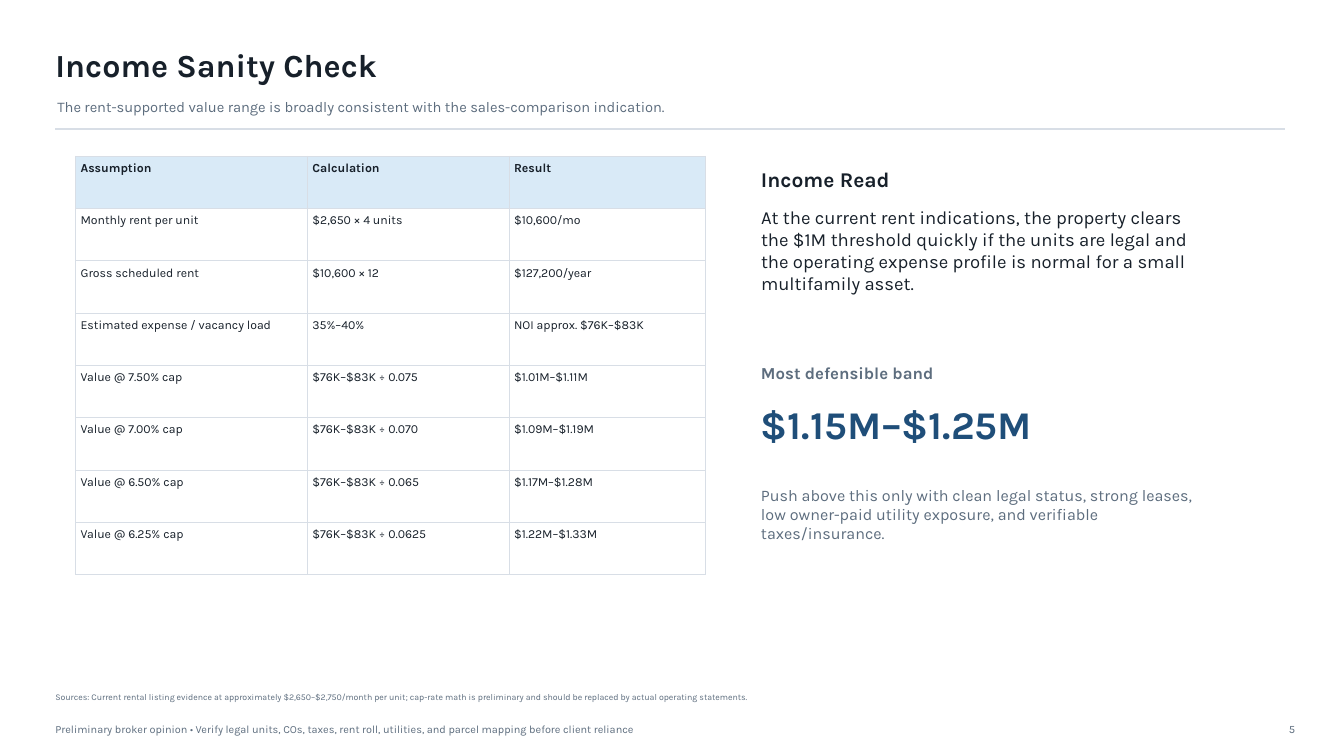
from lxml.etree import SubElement
from pptx import Presentation
from pptx.dml.color import RGBColor
from pptx.enum.shapes import MSO_CONNECTOR as CONN
from pptx.enum.text import MSO_ANCHOR as ANCHOR, PP_ALIGN as ALIGN
from pptx.oxml.ns import qn
from pptx.util import Pt

FONT = "Karla"
INK, MUTED, NAVY = "17202A", "5D6D7E", "1F4E79"
RULE, HEAD_FILL, WHITE = "D8DEE6", "D9EAF7", "FFFFFF"
COLUMN_WIDTHS = (165.6, 144, 140.4)
ROWS = (
    ("Assumption", "Calculation", "Result"),
    ("Monthly rent per unit", "$2,650 × 4 units", "$10,600/mo"),
    ("Gross scheduled rent", "$10,600 × 12", "$127,200/year"),
    ("Estimated expense / vacancy load", "35%–40%", "NOI approx. $76K–$83K"),
    ("Value @ 7.50% cap", "$76K–$83K ÷ 0.075", "$1.01M–$1.11M"),
    ("Value @ 7.00% cap", "$76K–$83K ÷ 0.070", "$1.09M–$1.19M"),
    ("Value @ 6.50% cap", "$76K–$83K ÷ 0.065", "$1.17M–$1.28M"),
    ("Value @ 6.25% cap", "$76K–$83K ÷ 0.0625", "$1.22M–$1.33M"),
)


def rgb(value):
    """Return the colour for a hex string."""
    return RGBColor.from_string(value)


def style(p, size, color, bold=False):
    """Format every run of a paragraph."""
    for r in p.runs:
        r.font.name, r.font.size, r.font.bold = FONT, Pt(size), bold
        r.font.color.rgb = rgb(color)


def set_margins(target, margin):
    """Give a text frame or a table cell four equal margins."""
    target.margin_left = target.margin_right = Pt(margin)
    target.margin_top = target.margin_bottom = Pt(margin)


def add_text(slide, x, y, w, h, text, size, color, bold=False, align=ALIGN.LEFT):
    """Add a wrapped, vertically centred text box without margins."""
    tf = slide.shapes.add_textbox(Pt(x), Pt(y), Pt(w), Pt(h)).text_frame
    tf.word_wrap = True
    tf.vertical_anchor = ANCHOR.MIDDLE
    set_margins(tf, 0)
    p = tf.paragraphs[0]
    p.text = text
    p.alignment = align
    style(p, size, color, bold)


def add_borders(cell, color, width):
    """Draw a thin line on all four sides of a cell."""
    tcPr = cell._tc.get_or_add_tcPr()
    for side in ("lnL", "lnR", "lnT", "lnB"):
        ln = SubElement(tcPr, qn(f"a:{side}"), w=str(Pt(width)))
        fill = SubElement(ln, qn("a:solidFill"))
        SubElement(fill, qn("a:srgbClr"), val=color)


def add_header(slide, x, y, w):
    """Place the title, the subtitle and the rule below them."""
    add_text(slide, x, y, 640.8, 31.7, "Income Sanity Check", 23, INK, True)
    add_text(slide, x + 1.44, y + 36, 698.4, 20.2,
             "The rent-supported value range is broadly consistent with the "
             "sales-comparison indication.", 10.5, MUTED)
    rule_y = Pt(y + 61.92)
    rule = slide.shapes.add_connector(CONN.STRAIGHT, Pt(x), rule_y, Pt(x + w), rule_y)
    rule.line.color.rgb = rgb(RULE)
    rule.line.width = Pt(1)
    SubElement(rule._element.spPr, qn("a:effectLst"))


def add_income_table(slide, x, y, h):
    """Place the table of rent assumptions and capped values."""
    table = slide.shapes.add_table(
        len(ROWS), len(COLUMN_WIDTHS), Pt(x), Pt(y), Pt(sum(COLUMN_WIDTHS)), Pt(h)).table
    table.horz_banding = False
    for column, width in zip(table.columns, COLUMN_WIDTHS):
        column.width = Pt(width)
    for i, values in enumerate(ROWS):
        table.rows[i].height = Pt(h / len(ROWS))
        for cell, value in zip(table.rows[i].cells, values):
            cell.text = value
            set_margins(cell, 3.6)
            style(cell.text_frame.paragraphs[0], 8.8, INK, i == 0)
            add_borders(cell, RULE, 0.55)
            cell.fill.solid()
            cell.fill.fore_color.rgb = rgb(WHITE if i else HEAD_FILL)


def add_income_read(slide, x, y):
    """Place the reading of the income and the defensible value band."""
    add_text(slide, x, y, 180, 23, "Income Read", 15, INK, True)
    add_text(slide, x, y + 33.12, 320.4, 57.6,
             "At the current rent indications, the property clears the $1M threshold "
             "quickly if the units are legal and the operating expense profile is "
             "normal for a small multifamily asset.", 13.2, INK)
    add_text(slide, x, y + 138.96, 216, 21.6, "Most defensible band", 12, MUTED, True)
    add_text(slide, x, y + 166.32, 273.6, 39.6, "$1.15M–$1.25M", 28, NAVY, True)
    add_text(slide, x, y + 228.96, 316.8, 43.2,
             "Push above this only with clean legal status, strong leases, low "
             "owner-paid utility exposure, and verifiable taxes/insurance.", 11.5, MUTED)


def add_footer(slide, x, y, w):
    """Place the sources, the disclaimer and the page number."""
    add_text(slide, x, y, 871.2, 13,
             "Sources: Current rental listing evidence at approximately "
             "$2,650–$2,750/month per unit; cap-rate math is preliminary and should "
             "be replaced by actual operating statements.", 6.3, MUTED)
    add_text(slide, x, y + 21.6, 777.6, 15.8,
             "Preliminary broker opinion • Verify legal units, COs, taxes, rent roll, "
             "utilities, and parcel mapping before client reliance", 7.8, MUTED)
    add_text(slide, x + w - 21.6, y + 21.6, 21.6, 15.8, "5", 8, MUTED, align=ALIGN.RIGHT)


def main():
    """Build the slide and save it."""
    prs = Presentation()
    prs.slide_width, prs.slide_height = Pt(960), Pt(540)
    slide = prs.slides.add_slide(prs.slide_layouts[6])
    slide.background.fill.solid()
    slide.background.fill.fore_color.rgb = rgb(WHITE)
    add_header(slide, 39.6, 30.24, 878.4)
    add_income_table(slide, 54, 111.6, 298.8)
    add_income_read(slide, 543.6, 116.64)
    add_footer(slide, 39.6, 491.04, 885.6)
    prs.save("out.pptx")


if __name__ == "__main__":
    main()
